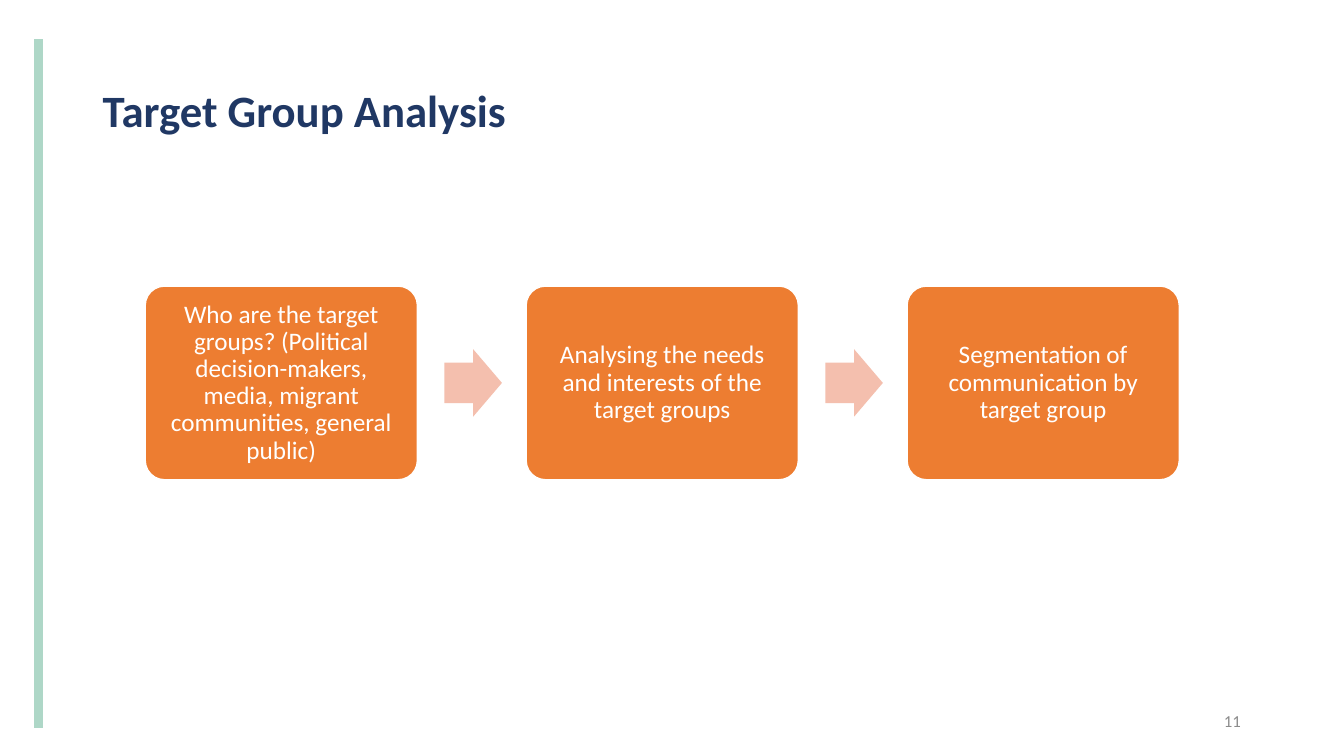
import pptx
import pptx.util
import pptx.dml.color
import pptx.enum.shapes
import pptx.enum.text
from lxml import etree

Cm = pptx.util.Cm
Pt = pptx.util.Pt
Shape = pptx.enum.shapes.MSO_SHAPE
Align = pptx.enum.text.PP_ALIGN

TITLE = "Target Group Analysis"
NUMBER = "11"
STEPS = [
    "Who are the target groups? (Political decision-makers, media, "
    "migrant communities, general public)",
    "Analysing the needs and interests of the target groups",
    "Segmentation of communication by target group",
]
NAVY, GREY, GREEN = "203864", "8C8C8C", "AED7C7"
ORANGE, PEACH, WHITE = "ED7D31", "F4BFAE", "FFFFFF"

LEFT, MIDDLE, PITCH = 3.66, 9.65, 9.6
BOX_W, BOX_H = 6.86, 4.88
ARROW_W, ARROW_H, ARROW_GAP = 1.45, 1.7, 0.68


def paint(target, color):
    target.solid()
    target.fore_color.rgb = pptx.dml.color.RGBColor.from_string(color)


def write(shape, text, size, color, align, bold=False, space=1.0):
    frame = shape.text_frame
    frame.word_wrap = True
    frame.vertical_anchor = pptx.enum.text.MSO_ANCHOR.MIDDLE
    frame.text = text
    para = frame.paragraphs[0]
    para.alignment = align
    para.line_spacing = space
    font = para.runs[0].font
    font.name, font.size, font.bold = "Calibri", Pt(size), bold
    paint(font.fill, color)


def block(kind, left, width, height, color, adjust):
    top = MIDDLE - height / 2
    shape = slide.shapes.add_shape(kind, Cm(left), Cm(top), Cm(width), Cm(height))
    shape.shadow.inherit = False
    paint(shape.fill, color)
    for i, value in enumerate(adjust):
        shape.adjustments[i] = value
    return shape


deck = pptx.Presentation()
deck.slide_width, deck.slide_height = Cm(33.87), Cm(19.05)
slide = deck.slides.add_slide(deck.slide_layouts[6])

bar = slide.shapes.add_connector(
    pptx.enum.shapes.MSO_CONNECTOR.STRAIGHT, Cm(0.97), Cm(0.99), Cm(0.97), Cm(18.34))
bar.line.width = Pt(6)
paint(bar.line.fill, GREEN)
etree.SubElement(bar._element.spPr, pptx.oxml.ns.qn("a:effectLst"))

title = slide.shapes.add_textbox(Cm(2.34), Cm(1.02), Cm(29.21), Cm(3.68))
write(title, TITLE, 32, NAVY, Align.LEFT, True, 0.9)
number = slide.shapes.add_textbox(Cm(29.74), Cm(17.65), Cm(1.78), Cm(1.02))
write(number, NUMBER, 12, GREY, Align.RIGHT)

for i, step in enumerate(STEPS):
    left = LEFT + i * PITCH
    box = block(Shape.ROUNDED_RECTANGLE, left, BOX_W, BOX_H, ORANGE, [0.1])
    box.line.width = Pt(1)
    paint(box.line.fill, WHITE)
    frame = box.text_frame
    frame.margin_left = frame.margin_right = Cm(0.18)
    frame.margin_top = frame.margin_bottom = Cm(0.18)
    write(box, step, 18, WHITE, Align.CENTER, space=0.9)
    if i < len(STEPS) - 1:
        arrow = block(Shape.RIGHT_ARROW, left + BOX_W + ARROW_GAP,
                      ARROW_W, ARROW_H, PEACH, [0.6, 0.5])
        arrow.line.fill.background()

deck.save("out.pptx")
